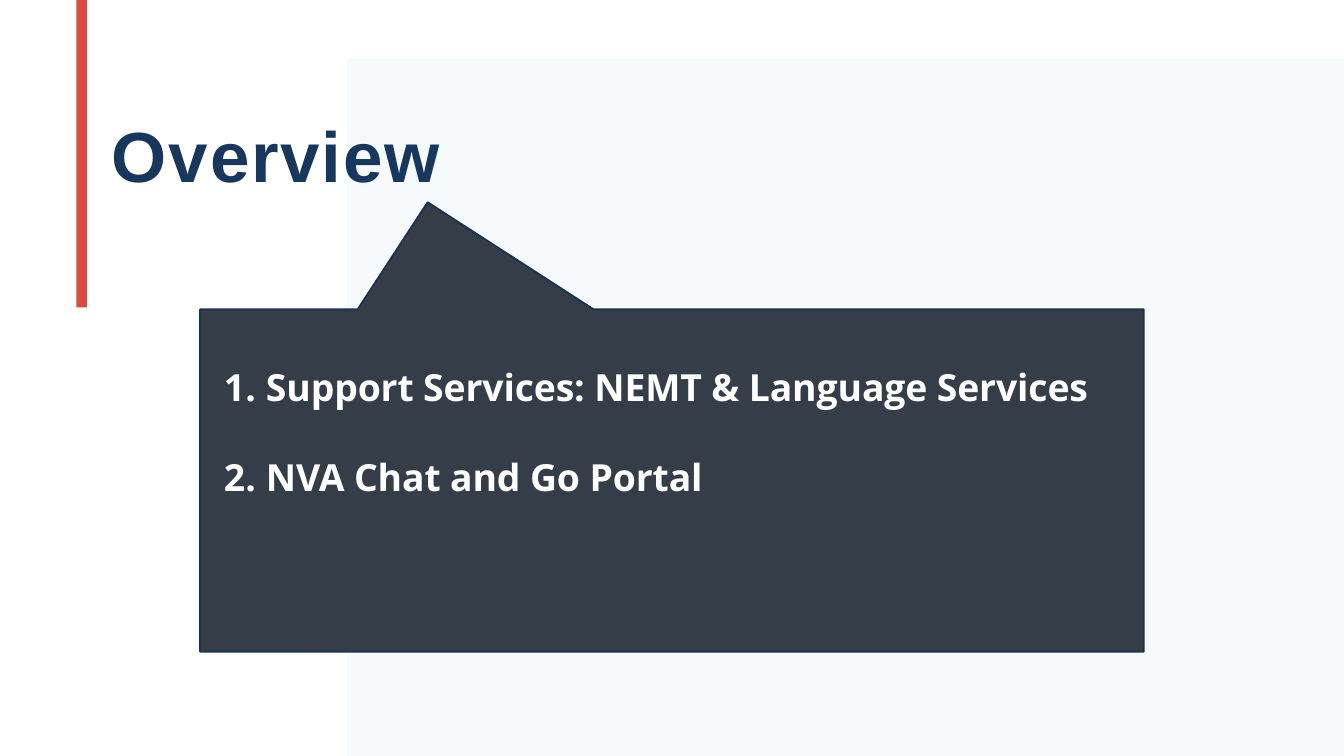
from lxml.etree import SubElement
from pptx import Presentation
from pptx.dml.color import RGBColor
from pptx.enum.shapes import MSO_SHAPE
from pptx.enum.text import MSO_AUTO_SIZE
from pptx.oxml.ns import qn
from pptx.util import Pt

PX = 9525  # EMU in one px, 96 px to the inch
WHITE = RGBColor(0xFF, 0xFF, 0xFF)
PALE = RGBColor(0xF6, 0xFA, 0xFD)
RED = RGBColor(0xDB, 0x4B, 0x3E)
NAVY = RGBColor(0x17, 0x37, 0x5E)
SLATE = RGBColor(0x35, 0x3D, 0x49)
EDGE = RGBColor(0x1C, 0x33, 0x4E)

TOPICS = [
    "Support Services: NEMT & Language Services",
    "NVA Chat and Go Portal",
]


def scale(*nums):
    return [num * PX for num in nums]


def add_block(slide, box, color):
    block = slide.shapes.add_shape(MSO_SHAPE.RECTANGLE, *scale(*box))
    block.shadow.inherit = False
    block.fill.solid()
    block.fill.fore_color.rgb = color
    block.line.fill.background()


def add_frame(slide, box):
    frame = slide.shapes.add_textbox(*scale(*box)).text_frame
    frame.word_wrap = True
    frame.auto_size = MSO_AUTO_SIZE.SHAPE_TO_FIT_TEXT
    frame.margin_left = frame.margin_right = frame.margin_bottom = 0
    frame.margin_top = 3 * PX
    return frame


def style(para, font, size, color, gap):
    """Format every run; gap is letter spacing in 1/100 pt."""
    for run in para.runs:
        run.font.name = font
        run.font.size = Pt(size)
        run.font.bold = True
        run.font.color.rgb = color
        run.font._element.set("spc", str(gap))


def add_number(para, indent):
    props = para._p.get_or_add_pPr()
    props.set("marL", str(indent * PX))
    props.set("indent", str(-indent * PX))
    SubElement(props, qn("a:buFont"), typeface="Open Sans")
    SubElement(props, qn("a:buAutoNum"), type="arabicPeriod")
    tabs = SubElement(props, qn("a:tabLst"))
    SubElement(tabs, qn("a:tab"), pos=str(indent * PX), algn="l")


def add_title(slide, box):
    frame = add_frame(slide, box)
    frame.text = "Overview"
    style(frame.paragraphs[0], "Arial", 76, NAVY, 200)


def add_callout(slide, box):
    left, top, width, height = box
    right, base = left + width, top + height
    roof = top + 153  # top edge of the body, below the pointer

    # Body and pointer in one outline
    pen = slide.shapes.build_freeform(left, roof, scale=PX)
    pen.add_line_segments([
        (left + 225, roof), (left + 325, top), (left + 562, roof),
        (right, roof), (right, base), (left, base),
    ])
    shape = pen.convert_to_shape()
    shape.shadow.inherit = False
    shape.fill.solid()
    shape.fill.fore_color.rgb = SLATE
    shape.line.color.rgb = EDGE
    shape.line.width = Pt(2)

    # Numbered topics
    frame = add_frame(slide, (left + 34, roof + 76, width - 44, 195))
    for i, topic in enumerate(TOPICS):
        para = frame.add_paragraph() if i else frame.paragraphs[0]
        para.text = topic
        add_number(para, 60)
        if i:
            para.space_before = Pt(48)
        para.font.size = Pt(40)
        para.font.bold = True
        style(para, "Open Sans", 40, WHITE, -10)


def main():
    deck = Presentation()
    deck.slide_width, deck.slide_height = scale(1920, 1080)
    slide = deck.slides.add_slide(deck.slide_layouts[6])

    # Backdrop panel bleeds off the right and bottom edges
    add_block(slide, (496, 84, 1920, 1080), PALE)
    add_callout(slide, (286, 289, 1348, 642))
    # Accent bar beside the title
    add_block(slide, (109, 0, 15, 439), RED)
    add_title(slide, (160, 156, 488, 125))
    deck.save("out.pptx")


if __name__ == "__main__":
    main()
